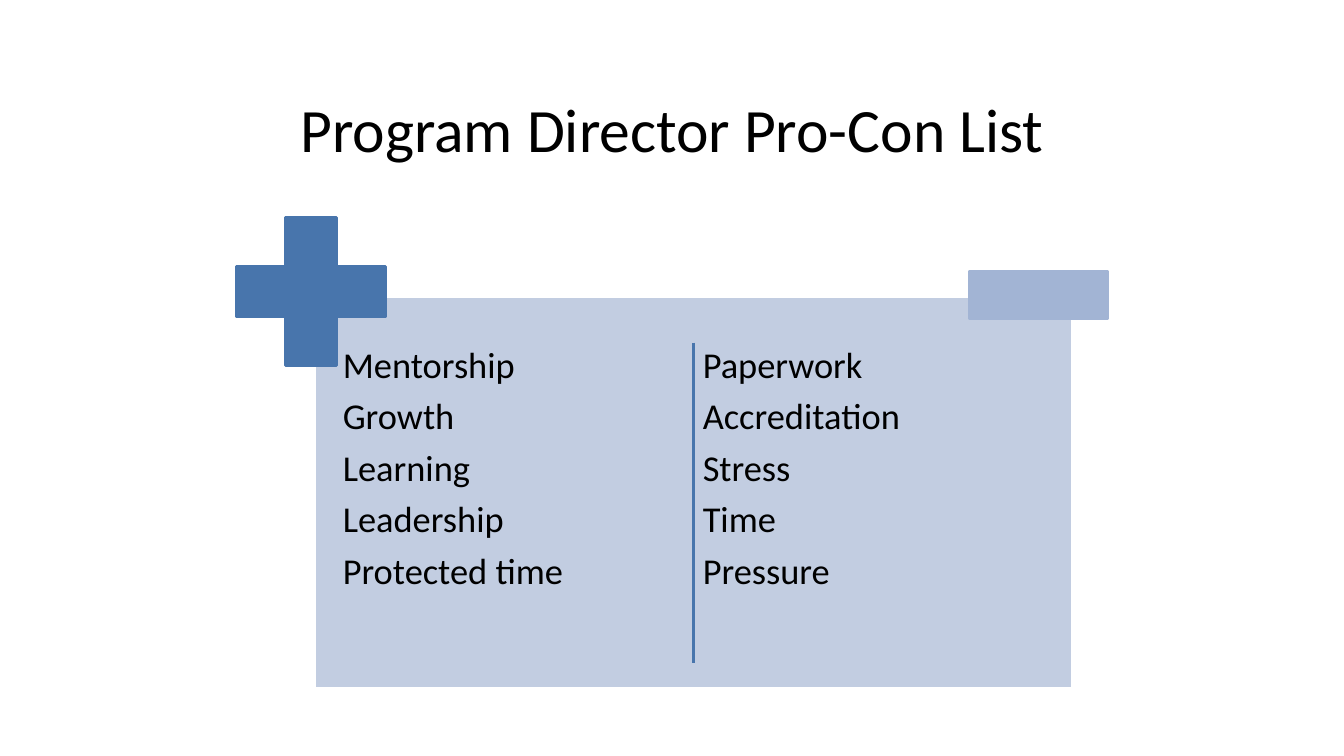
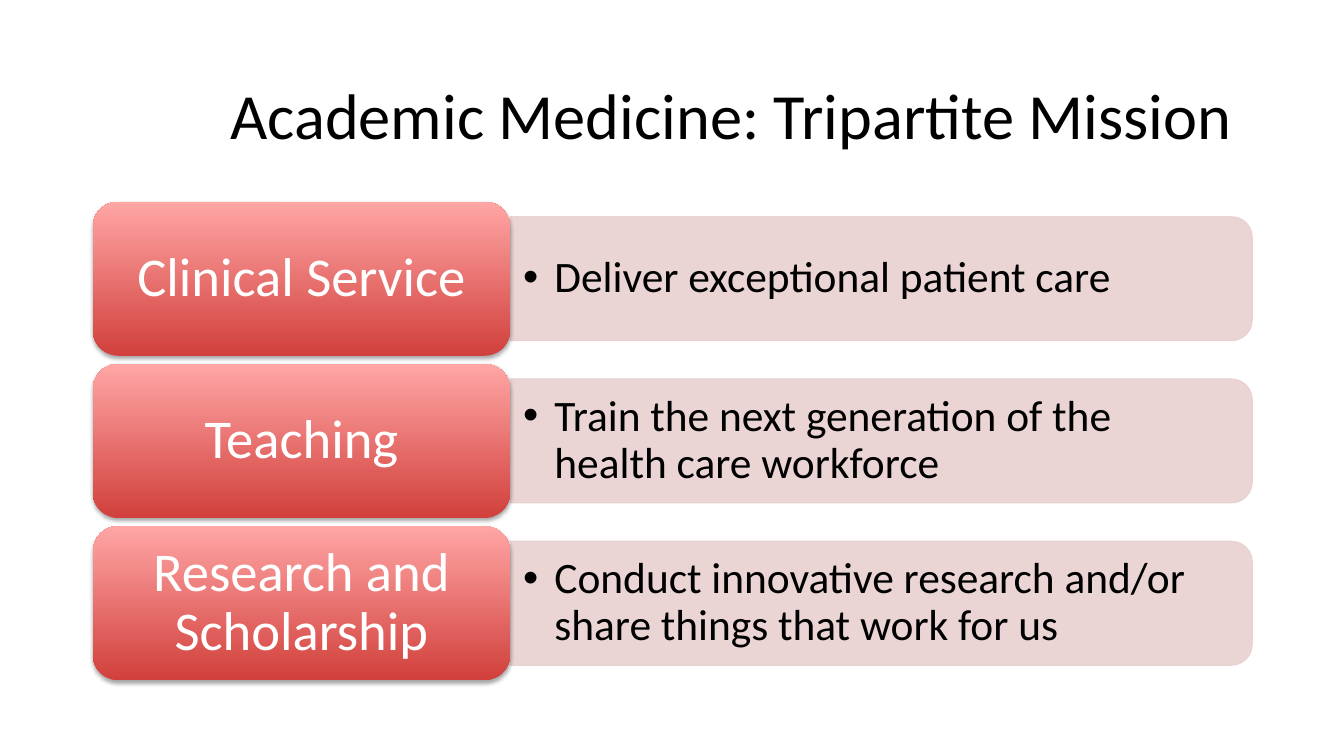
from lxml import etree
from pptx import Presentation
from pptx.dml.color import RGBColor
from pptx.enum.shapes import MSO_CONNECTOR, MSO_SHAPE
from pptx.enum.text import MSO_ANCHOR, MSO_AUTO_SIZE, PP_ALIGN
from pptx.oxml.ns import qn
from pptx.util import Pt

PX = 9144  # 100 px to the inch
RECT, PLUS = MSO_SHAPE.RECTANGLE, MSO_SHAPE.CROSS
ROUND, TAB = MSO_SHAPE.ROUNDED_RECTANGLE, MSO_SHAPE.ROUND_2_SAME_RECTANGLE
LINE = MSO_CONNECTOR.STRAIGHT
LEFT, MID = PP_ALIGN.LEFT, PP_ALIGN.CENTER
TOP, HALF = MSO_ANCHOR.TOP, MSO_ANCHOR.MIDDLE
FIXED = MSO_AUTO_SIZE.NONE

FONT = "Calibri"
BLACK, WHITE = "000000", "FFFFFF"
BLUE, SKY, PALE = "4875AC", "A2B4D4", "C2CDE1"
RED, ROSE, BLUSH = "D1403C", "FFA6A5", "E8D0D0"

PROS = ["Mentorship", "Growth", "Learning", "Leadership", "Protected time"]
CONS = ["Paperwork", "Accreditation", "Stress", "Time", "Pressure"]
GOALS = [
    ("Clinical Service", "Deliver exceptional patient care"),
    ("Teaching", "Train the next generation of the health care workforce"),
    ("Research and Scholarship",
     "Conduct innovative research and/or share things that work for us"),
]


def rgb(code):
    return RGBColor.from_string(code)


def emu(box):
    return [round(n * PX) for n in box]


def style(item, vals):
    for name, val in vals.items():
        setattr(item, name, val)


def add(parent, tag, **attrs):
    node = etree.SubElement(parent, qn(tag))
    for name, val in attrs.items():
        node.set(name, str(val))
    return node


def place(shape, box):
    style(shape, dict(zip(("left", "top", "width", "height"), emu(box))))


def write(shape, lines, size, color=BLACK, align=LEFT, anchor=HALF,
          pad=(5, 5), gap=0, space=0.9, dot=None):
    """Fill a shape with paragraphs; dot is a hanging bullet's indent in px."""
    frame = shape.text_frame
    side, edge = emu(pad)
    style(frame, {"word_wrap": True, "auto_size": FIXED,
                  "vertical_anchor": anchor,
                  "margin_left": side, "margin_right": side,
                  "margin_top": edge, "margin_bottom": edge})
    for i, line in enumerate(lines):
        para = frame.add_paragraph() if i else frame.paragraphs[0]
        props = para._p.get_or_add_pPr()
        hang = (dot or 0) * PX
        props.set("marL", str(hang))
        props.set("indent", str(-hang))
        if dot:
            add(props, "a:buFont", typeface="Arial")
            add(props, "a:buChar", char="•")
        else:
            add(props, "a:buNone")
        style(para, {"alignment": align, "line_spacing": space,
                     "space_before": Pt(0), "space_after": Pt(gap)})
        run = para.add_run()
        run.text = line
        style(run.font, {"name": FONT, "size": Pt(size)})
        run.font.color.rgb = rgb(color)


def draw(slide, kind, box, fill, edge=None, width=2):
    shape = slide.shapes.add_shape(kind, *emu(box))
    shape.shadow.inherit = False
    shape.fill.solid()
    shape.fill.fore_color.rgb = rgb(fill)
    shape.line.color.rgb = rgb(edge or fill)
    shape.line.width = Pt(width)
    return shape


def start(deck, layout, title, box, size):
    slide = deck.slides.add_slide(deck.slide_layouts[layout])
    head = slide.shapes.title
    place(head, box)
    write(head, [title], size, align=MID, pad=(10, 5), space=1.0)
    return slide


def compare(slide, box):
    """Panel with two lists, a divider, and plus and minus signs."""
    x, y, w, h = box
    panel = draw(slide, RECT, box, PALE, WHITE)
    slide.shapes._spTree.insert(2, panel._element)
    for spot, dx, items in ((1, 23, PROS), (2, 380, CONS)):
        body = slide.placeholders[spot]
        place(body, (x + dx, y + 45, 349, 332))
        write(body, items, 26, anchor=TOP, gap=8.75)
    plus = draw(slide, PLUS, (x - 77, y - 78, 147, 147), BLUE)
    plus.adjustments[0] = 0.33
    draw(slide, RECT, (x + w - 103, y - 25, 138, 47), SKY)
    mid = x + w // 2
    rule = slide.shapes.add_connector(
        LINE, *emu((mid, y + 46, mid, y + h - 25)))
    rule.line.color.rgb = rgb(BLUE)
    rule.line.width = Pt(2)
    add(rule._element.spPr, "a:effectLst")


def band(slide, box, text):
    """Translucent bar rounded at its right end, with one bullet."""
    x, y, w, h = box
    turned = (x + (w - h) / 2, y + (h - w) / 2, h, w)
    bar = draw(slide, TAB, turned, BLUSH, width=0.75)
    bar.rotation = 90
    for tint in bar._element.spPr.iter(qn("a:srgbClr")):
        add(tint, "a:alpha", val=90000)
    note = slide.shapes.add_textbox(*emu((x, y + 6, w - 6, h - 12)))
    write(note, [text], 31, pad=(13, 6), dot=31)


def card(slide, box, text):
    shape = draw(slide, ROUND, box, RED)
    shape.line.fill.background()
    shape.fill.gradient()
    shape.fill.gradient_angle = 90
    for stop, tint in zip(shape.fill.gradient_stops, (RED, ROSE)):
        stop.color.rgb = rgb(tint)
    glow = add(shape._element.spPr.find(qn("a:effectLst")), "a:outerShdw",
               blurRad=Pt(3.1), dist=Pt(1.8), dir=5400000, rotWithShape=0)
    tint = add(glow, "a:srgbClr", val=BLACK)
    add(tint, "a:alpha", val=35000)
    write(shape, [text], 39, WHITE, MID, pad=(23, 15))


def goals(slide, box):
    x, y, w, h = box
    gap, wide = 8, 414
    tall = (h - gap * (len(GOALS) - 1)) // len(GOALS)
    for i, (name, text) in enumerate(GOALS):
        top = y + i * (tall + gap)
        band(slide, (x + wide, top + 15, w - wide, tall - 30), text)
        card(slide, (x, top, wide, tall), name)


def main():
    deck = Presentation()
    style(deck, {"slide_width": 1333 * PX, "slide_height": 750 * PX})
    slide = start(deck, 3, "Program Director Pro-Con List",
                  (67, 64, 1200, 125), 44)
    compare(slide, (312, 294, 752, 389))
    slide = start(deck, 5, "Academic Medicine: Tripartite Mission",
                  (209, 40, 1032, 145), 46)
    goals(slide, (92, 200, 1150, 475))
    deck.save("out.pptx")


if __name__ == "__main__":
    main()
